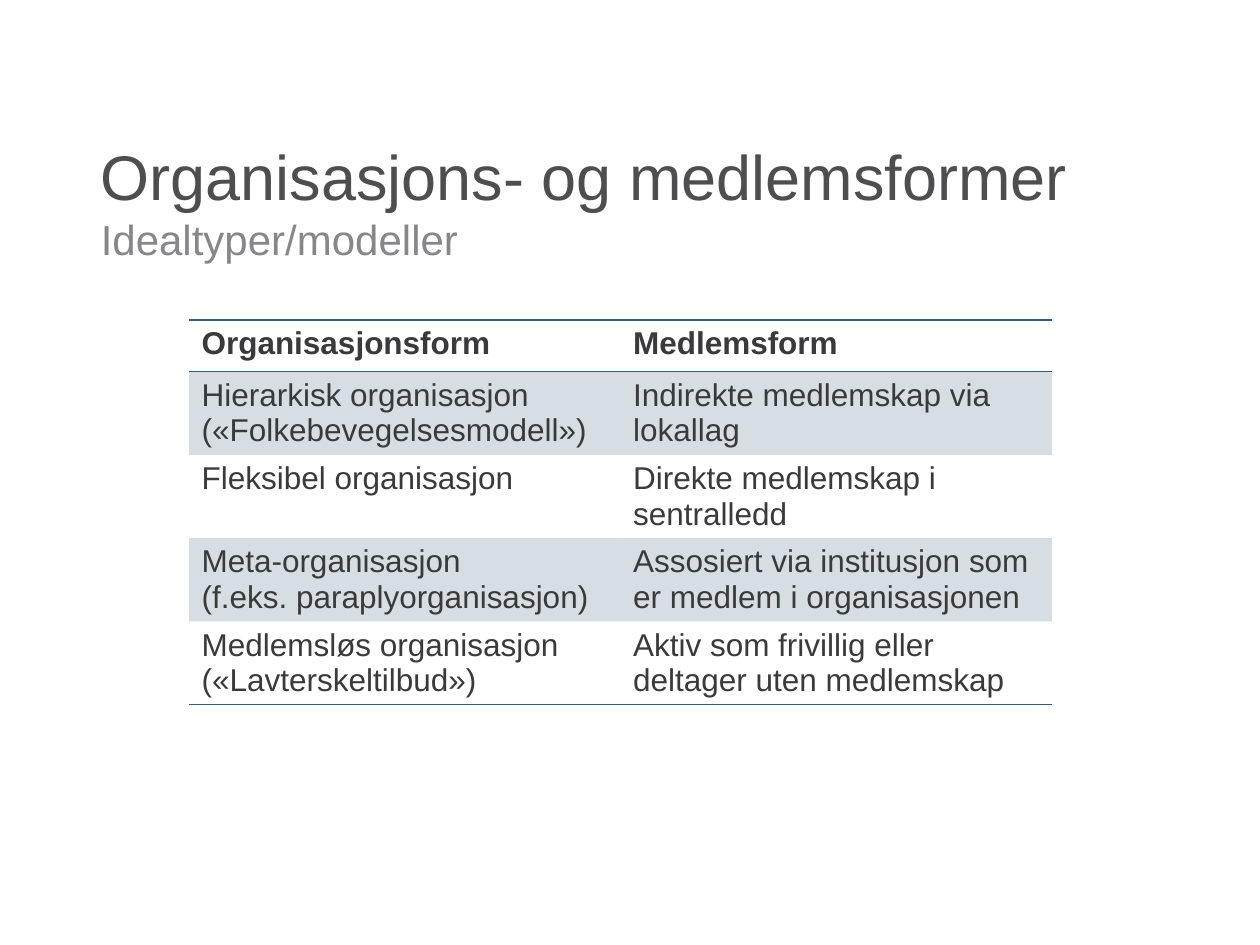
from dataclasses import dataclass

from lxml.etree import SubElement
from pptx import Presentation
from pptx.dml.color import RGBColor as Rgb
from pptx.enum.text import MSO_ANCHOR as Anchor, MSO_AUTO_SIZE as AutoSize, PP_ALIGN as Align
from pptx.oxml.ns import qn
from pptx.util import Inches, Pt


@dataclass(frozen=True)
class Theme:
    font: str = "Arial"
    title_color: str = "4E4E50"
    subtitle_color: str = "87878B"
    body_color: str = "3A3A3C"
    accent: str = "355B75"
    band_opacity: int = 20
    title_size: int = 36
    subtitle_size: int = 24
    body_size: int = 18
    plain_table: str = "{2D5ABB26-0587-4C30-8999-92F81FD0307C}"


class SlideBuilder:
    def __init__(self, slide, theme):
        self.slide = slide
        self.theme = theme

    def style(self, run, size, color, bold=False):
        run.font.name = self.theme.font
        run.font.size = Pt(size)
        run.font.bold = bold
        run.font.color.rgb = Rgb.from_string(color)

    def title(self, heading, subtitle, left, top, width, height):
        title = self.slide.shapes.title
        title.left, title.top = Inches(left), Inches(top)
        title.width, title.height = Inches(width), Inches(height)
        frame = title.text_frame
        frame.text = f"{heading}\v{subtitle}"
        frame.word_wrap = True
        frame.auto_size = AutoSize.NONE
        frame.vertical_anchor = Anchor.MIDDLE
        paragraph = frame.paragraphs[0]
        paragraph.alignment = Align.LEFT
        heading_run, subtitle_run = paragraph.runs
        self.style(heading_run, self.theme.title_size, self.theme.title_color)
        self.style(subtitle_run, self.theme.subtitle_size, self.theme.subtitle_color)
        line_break = paragraph._p.find(qn("a:br"))
        SubElement(line_break, qn("a:rPr"), sz=str(self.theme.title_size * 100))

    def border(self, cell, side):
        line = SubElement(cell._tc.get_or_add_tcPr(), qn(f"a:{side}"), w=str(Pt(1)))
        fill = SubElement(line, qn("a:solidFill"))
        SubElement(fill, qn("a:srgbClr"), val=self.theme.accent)

    def fill(self, cell, banded):
        if not banded:
            cell.fill.background()
            return
        cell.fill.solid()
        cell.fill.fore_color.rgb = Rgb.from_string(self.theme.accent)
        color = cell._tc.tcPr.find(qn("a:solidFill")).find(qn("a:srgbClr"))
        SubElement(color, qn("a:alpha"), val=str(self.theme.band_opacity * 1000))

    def table(self, rows, left, top, width, header_height, row_height):
        height = header_height + row_height * (len(rows) - 1)
        table = self.slide.shapes.add_table(
            len(rows), len(rows[0]), Inches(left), Inches(top), Inches(width), Inches(height)
        ).table
        table._tbl.tblPr.find(qn("a:tableStyleId")).text = self.theme.plain_table
        for index, texts in enumerate(rows):
            is_header = index == 0
            table.rows[index].height = Inches(header_height if is_header else row_height)
            for column, text in enumerate(texts):
                cell = table.cell(index, column)
                cell.text = text
                for run in cell.text_frame.paragraphs[0].runs:
                    self.style(run, self.theme.body_size, self.theme.body_color, is_header)
                if is_header:
                    self.border(cell, "lnT")
                if is_header or index == len(rows) - 1:
                    self.border(cell, "lnB")
                self.fill(cell, index % 2 == 1)


def main():
    presentation = Presentation()
    presentation.slide_width, presentation.slide_height = Inches(10), Inches(7.5)
    slide = presentation.slides.add_slide(presentation.slide_layouts[5])
    builder = SlideBuilder(slide, Theme())

    membership_forms = [
        ("Organisasjonsform", "Medlemsform"),
        ("Hierarkisk organisasjon («Folkebevegelsesmodell»)", "Indirekte medlemskap via lokallag"),
        ("Fleksibel organisasjon", "Direkte medlemskap i sentralledd"),
        (
            "Meta-organisasjon\v(f.eks. paraplyorganisasjon)",
            "Assosiert via institusjon som er medlem i organisasjonen",
        ),
        (
            "Medlemsløs organisasjon\v(«Lavterskeltilbud»)",
            "Aktiv som frivillig eller deltager uten medlemskap",
        ),
    ]
    builder.table(membership_forms, 1.5, 2.54, 6.85, 0.41, 0.66)
    builder.title("Organisasjons- og medlemsformer", "Idealtyper/modeller", 0.7, 0.97, 8.09, 1.25)

    presentation.save("out.pptx")


if __name__ == "__main__":
    main()
